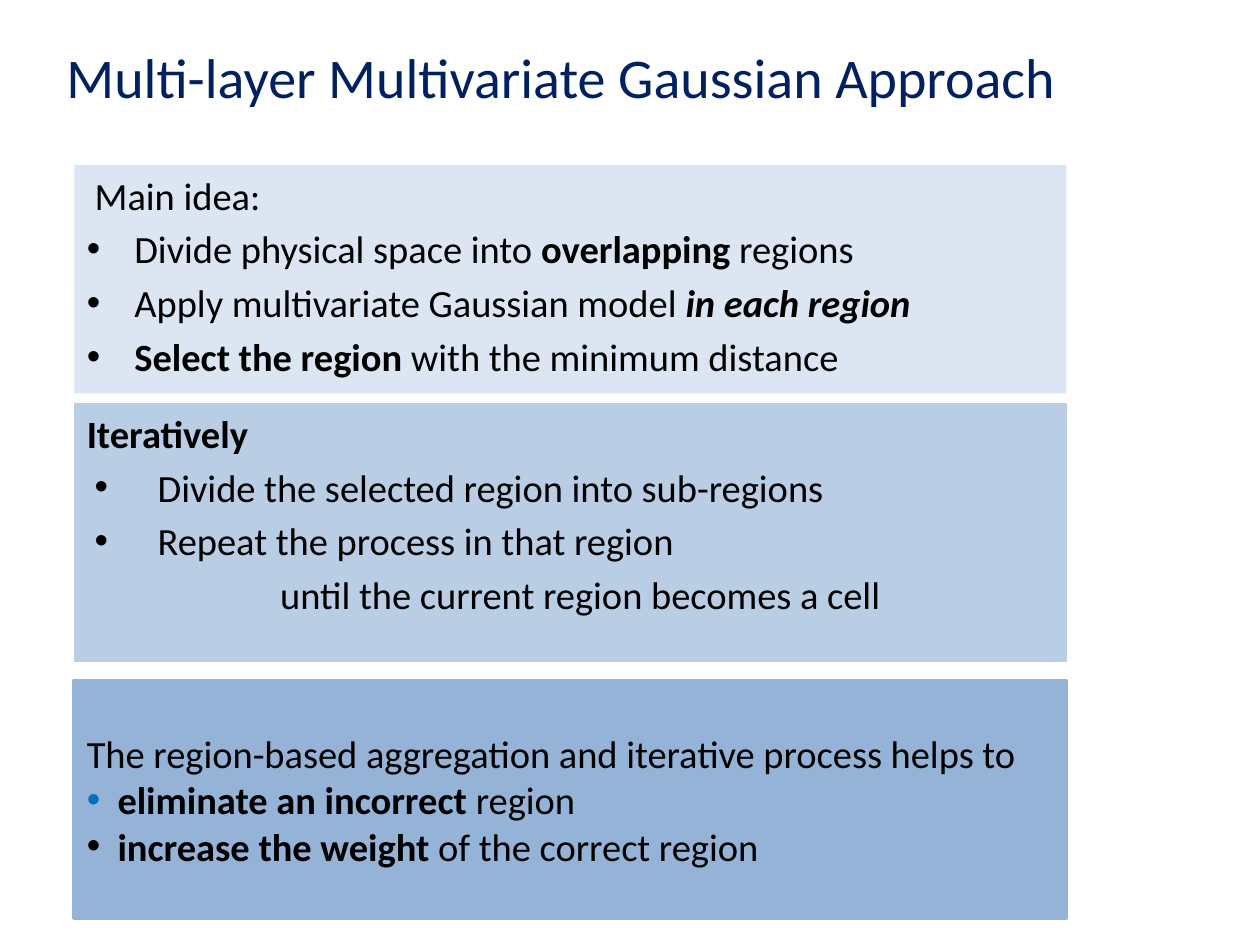
from dataclasses import dataclass

from lxml import etree
from pptx import Presentation
from pptx.dml.color import RGBColor
from pptx.enum.shapes import MSO_SHAPE
from pptx.enum.text import MSO_ANCHOR, PP_ALIGN
from pptx.oxml.ns import qn
from pptx.util import Cm, Pt

RECTANGLE = MSO_SHAPE.RECTANGLE
TOP, MIDDLE = MSO_ANCHOR.TOP, MSO_ANCHOR.MIDDLE
LEFT = PP_ALIGN.LEFT


@dataclass(frozen=True)
class Theme:
    font: str = "Calibri"
    bullet_font: str = "Arial"
    title_size: float = 32
    body_size: float = 22
    title: str = "002060"
    text: str = "000000"
    accent: str = "0070C0"
    light: str = "DCE6F2"
    medium: str = "B9CDE5"
    dark: str = "95B3D7"


@dataclass(frozen=True)
class Run:
    text: str
    bold: bool = False
    italic: bool = False


@dataclass(frozen=True)
class Line:
    runs: tuple[Run, ...]
    margin: float = 0
    hanging: float = 0
    bullet_color: str | None = None


@dataclass(frozen=True)
class Panel:
    top: float
    height: float
    fill: str
    lines: tuple[Line, ...]
    border: float = 0
    spacing: float = 4.4
    top_inset: float = 0.13


THEME = Theme()
PANEL_LEFT, PANEL_WIDTH = 1.5, 20


def bullet(*runs: Run, margin: float, hanging: float, color: str = THEME.text) -> Line:
    return Line(runs, margin, hanging, color)


def idea(*runs: Run) -> Line:
    return bullet(*runs, margin=0.96, hanging=0.96)


def step(text: str) -> Line:
    return bullet(Run(text), margin=1.43, hanging=1.27)


def benefit(strong: str, rest: str, color: str = THEME.text) -> Line:
    return bullet(Run(strong, bold=True), Run(rest), margin=0.62, hanging=0.62, color=color)


PANELS = (
    Panel(3.33, 4.6, THEME.light, (
        Line((Run("Main idea:"),), margin=0.16),
        idea(Run("Divide physical space into "), Run("overlapping ", bold=True), Run("regions")),
        idea(Run("Apply multivariate Gaussian model "), Run("in each region", bold=True, italic=True)),
        idea(Run("Select the region ", bold=True), Run("with the minimum distance")),
    )),
    Panel(8.13, 5.2, THEME.medium, (
        Line((Run("Iteratively", bold=True),)),
        step("Divide the selected region into sub-regions"),
        step("Repeat the process in that region"),
        Line((Run("until the current region becomes a cell"),), margin=3.9),
    ), border=0.75),
    Panel(13.72, 4.78, THEME.dark, (
        Line((Run("The region-based aggregation and iterative process helps to"),)),
        benefit("eliminate an incorrect ", "region", THEME.accent),
        benefit("increase the weight ", "of the correct region"),
    ), border=2.25, spacing=0, top_inset=1),
)


def apply_format(target, values: dict) -> None:
    for name, value in values.items():
        setattr(target, name, value)


def add_bullet(properties, color: str) -> None:
    fill = etree.SubElement(properties, qn("a:buClr"))
    etree.SubElement(fill, qn("a:srgbClr"), val=color)
    etree.SubElement(properties, qn("a:buFont"), typeface=THEME.bullet_font)
    etree.SubElement(properties, qn("a:buChar"), char="•")


def write_line(paragraph, line: Line, size: float, color: str, spacing: float = 0) -> None:
    apply_format(paragraph, {"alignment": LEFT, "space_before": Pt(spacing)})
    properties = paragraph._p.get_or_add_pPr()
    properties.set("marL", str(Cm(line.margin)))
    properties.set("indent", str(-Cm(line.hanging)))
    if line.bullet_color:
        add_bullet(properties, line.bullet_color)
    for part in line.runs:
        run = paragraph.add_run()
        run.text = part.text
        apply_format(run.font, {"name": THEME.font, "size": Pt(size),
                                "bold": part.bold, "italic": part.italic})
        run.font.color.rgb = RGBColor.from_string(color)


def add_title(slide, text: str) -> None:
    shape = slide.shapes.add_textbox(Cm(1.09), Cm(0.53), Cm(23), Cm(2))
    apply_format(shape.text_frame, {"word_wrap": True, "vertical_anchor": MIDDLE})
    write_line(shape.text_frame.paragraphs[0], Line((Run(text),)), THEME.title_size, THEME.title)


def add_panel(slide, panel: Panel) -> None:
    shape = slide.shapes.add_shape(RECTANGLE, Cm(PANEL_LEFT), Cm(panel.top),
                                   Cm(PANEL_WIDTH), Cm(panel.height))
    shape.shadow.inherit = False
    color = RGBColor.from_string(panel.fill)
    shape.fill.solid()
    shape.fill.fore_color.rgb = color
    if panel.border:
        shape.line.color.rgb = color
        shape.line.width = Pt(panel.border)
    else:
        shape.line.fill.background()
    frame = shape.text_frame
    apply_format(frame, {"word_wrap": True, "vertical_anchor": TOP,
                         "margin_top": Cm(panel.top_inset)})
    for index, line in enumerate(panel.lines):
        paragraph = frame.add_paragraph() if index else frame.paragraphs[0]
        write_line(paragraph, line, THEME.body_size, THEME.text, panel.spacing)


def main() -> None:
    presentation = Presentation()
    apply_format(presentation, {"slide_width": Cm(25.4), "slide_height": Cm(19.05)})
    slide = presentation.slides.add_slide(presentation.slide_layouts[6])
    add_title(slide, "Multi-layer Multivariate Gaussian Approach")
    for panel in PANELS:
        add_panel(slide, panel)
    presentation.save("out.pptx")


if __name__ == "__main__":
    main()
